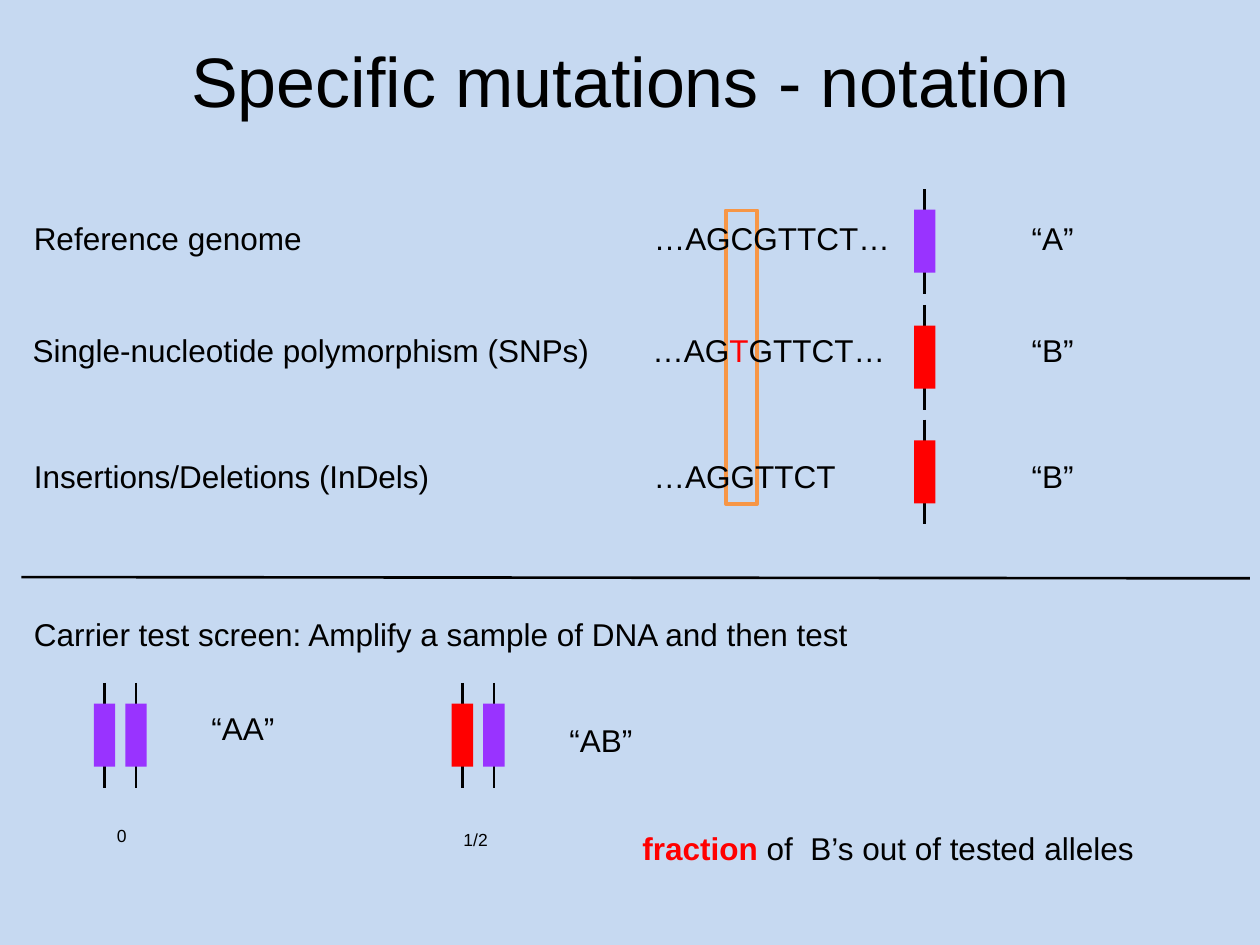
from dataclasses import dataclass

from pptx import Presentation
from pptx.dml.color import RGBColor
from pptx.enum import shapes, text
from pptx.oxml import xmlchemy
from pptx.util import Inches, Pt


@dataclass(frozen=True)
class Theme:
    font: str = "Arial"
    background: str = "C6D9F1"
    ink: str = "000000"
    normal: str = "9933FF"
    mutant: str = "FF0000"
    highlight: str = "F79646"
    title_size: int = 40
    body_size: int = 18
    small_size: int = 10
    rule_width: float = 1.5


THEME = Theme()
ALLELE_WIDTH, ALLELE_HEIGHT, STRAND_HEIGHT = 0.17, 0.5, 0.83

# label, label left, label width, label top, sequence runs,
# sequence left, sequence width, strand top, allele colour, symbol
ROWS = [
    ("Reference genome", 0.17, 5, 1.69, [("…AGCGTTCT…", {})],
     5.09, 2.08, 1.5, THEME.normal, "“A”"),
    ("Single-nucleotide polymorphism (SNPs)", 0.16, 4.75, 2.58,
     [("…AG", {}), ("T", {"color": THEME.mutant}), ("GTTCT…", {})],
     5.08, 2.11, 2.42, THEME.mutant, "“B”"),
    ("Insertions/Deletions (InDels)", 0.17, 3.42, 3.58, [("…AGGTTCT", {})],
     5.09, 1.66, 3.33, THEME.mutant, "“B”"),
]


def rgb(color):
    return RGBColor.from_string(color)


def write_runs(paragraph, runs, size):
    for wording, style in runs:
        run = paragraph.add_run()
        run.text = wording
        formats = {"name": THEME.font, "size": Pt(size),
                   "bold": style.get("bold", False)}
        for key, value in formats.items():
            setattr(run.font, key, value)
        run.font.color.rgb = rgb(style.get("color", THEME.ink))


def add_label(slide, left, top, width, runs, size=THEME.body_size,
              wrap=True, align=text.PP_ALIGN.LEFT):
    height = 0.4 if size == THEME.body_size else 0.27
    label = slide.shapes.add_textbox(
        Inches(left), Inches(top), Inches(width), Inches(height))
    label.text_frame.word_wrap = wrap
    label.text_frame.auto_size = text.MSO_AUTO_SIZE.SHAPE_TO_FIT_TEXT
    paragraph = label.text_frame.paragraphs[0]
    paragraph.alignment = align
    if isinstance(runs, str):
        runs = [(runs, {})]
    write_runs(paragraph, runs, size)


def add_line(slide, x1, y1, x2, y2):
    line = slide.shapes.add_connector(
        shapes.MSO_CONNECTOR.STRAIGHT,
        Inches(x1), Inches(y1), Inches(x2), Inches(y2))
    line.line.color.rgb = rgb(THEME.ink)
    line.line.width = Pt(THEME.rule_width)
    properties = line._element.spPr
    properties.append(xmlchemy.OxmlElement("a:effectLst"))


def add_box(slide, left, top, width, height, fill=None, outline=None):
    box = slide.shapes.add_shape(
        shapes.MSO_SHAPE.RECTANGLE,
        Inches(left), Inches(top), Inches(width), Inches(height))
    box.shadow.inherit = False
    if fill:
        box.fill.solid()
        box.fill.fore_color.rgb = rgb(fill)
    else:
        box.fill.background()
    if outline:
        box.line.color.rgb = rgb(outline)
        box.line.width = Pt(2)
    else:
        box.line.fill.background()


def add_allele(slide, center, top, color):
    """Draw a DNA strand with a coloured allele in its middle."""
    add_line(slide, center, top, center, top + STRAND_HEIGHT)
    add_box(slide, center - ALLELE_WIDTH / 2,
            top + (STRAND_HEIGHT - ALLELE_HEIGHT) / 2,
            ALLELE_WIDTH, ALLELE_HEIGHT, fill=color)


def add_title(slide):
    title = slide.shapes.title
    place = {"left": 0.42, "top": 0.25, "width": 9.17, "height": 0.77}
    for key, value in place.items():
        setattr(title, key, Inches(value))
    paragraph = title.text_frame.paragraphs[0]
    paragraph.alignment = text.PP_ALIGN.CENTER
    write_runs(paragraph, [("Specific mutations - notation", {})],
               THEME.title_size)


def add_notation(slide):
    add_box(slide, 5.76, 1.67, 0.25, 2.33, outline=THEME.highlight)
    for (name, left, width, top, sequence, sequence_left, sequence_width,
         strand_top, color, symbol) in ROWS:
        add_label(slide, left, top, width, name)
        add_label(slide, sequence_left, top, sequence_width, sequence,
                  wrap=False)
        add_allele(slide, 7.34, strand_top, color)
        add_label(slide, 8.09, top, 0.54, symbol, wrap=False)


def add_carrier_test(slide):
    add_line(slide, 0.17, 4.58, 9.92, 4.59)
    add_label(slide, 0.17, 4.83, 6.92,
              "Carrier test screen: Amplify a sample of DNA and then test")
    genotypes = [
        (0.83, (THEME.normal, THEME.normal), "“AA”", 1.58, 5.58),
        (3.67, (THEME.mutant, THEME.normal), "“AB”", 4.42, 5.67),
    ]
    for center, colors, symbol, left, top in genotypes:
        for index, color in enumerate(colors):
            add_allele(slide, center + 0.25 * index, 5.42, color)
        add_label(slide, left, top, 0.71, symbol, wrap=False)
    add_label(slide, 0.83, 6.5, 0.25, "0", THEME.small_size,
              align=text.PP_ALIGN.CENTER)
    add_label(slide, 3.58, 6.53, 0.42, "1/2", THEME.small_size)
    add_label(slide, 5, 6.53, 5.25,
              [("fraction", {"color": THEME.mutant, "bold": True}),
               (" of  B’s out of tested alleles", {})])


def main():
    deck = Presentation()
    deck.slide_width, deck.slide_height = Inches(10), Inches(7.5)
    slide = deck.slides.add_slide(deck.slide_layouts[5])
    slide.background.fill.solid()
    slide.background.fill.fore_color.rgb = rgb(THEME.background)
    add_title(slide)
    add_notation(slide)
    add_carrier_test(slide)
    deck.save("out.pptx")


if __name__ == "__main__":
    main()
